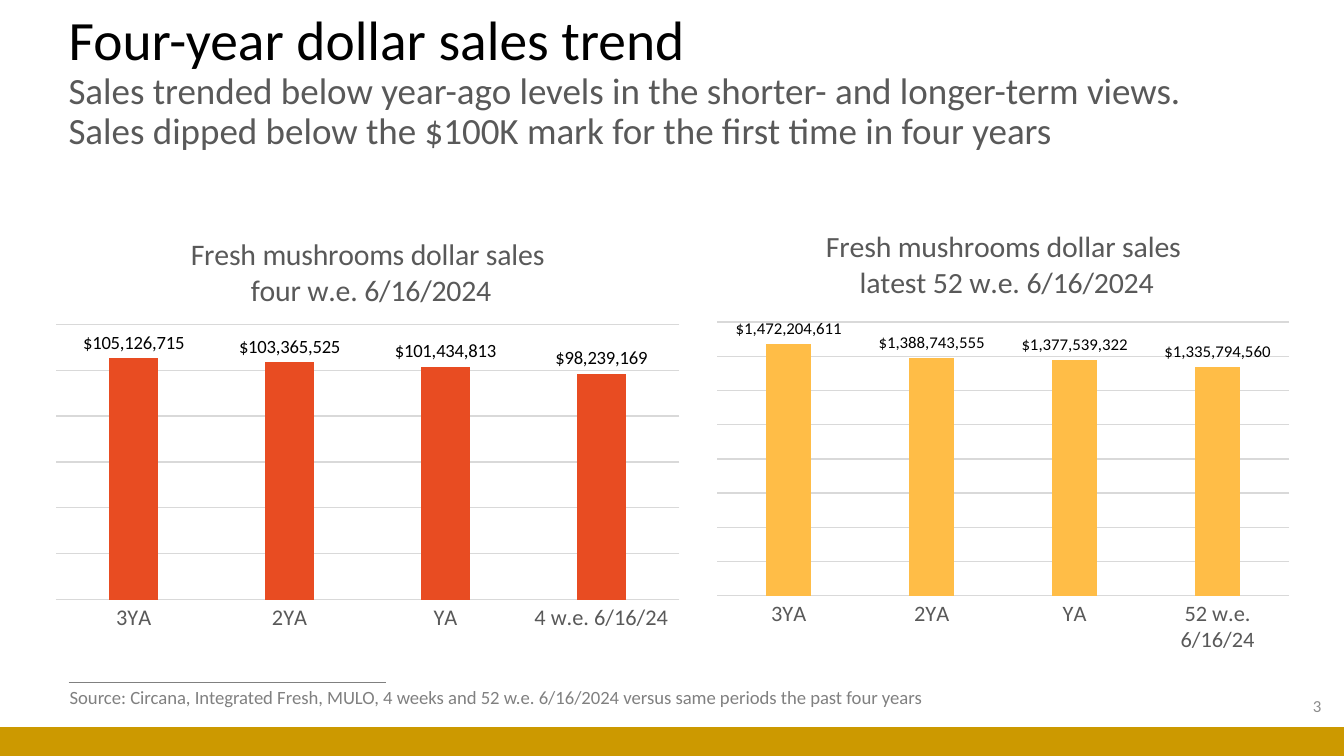
from lxml import etree
from pptx import Presentation
from pptx.chart.data import CategoryChartData
from pptx.dml.color import RGBColor
from pptx.enum.chart import XL_CHART_TYPE, XL_LABEL_POSITION, XL_TICK_MARK
from pptx.enum.shapes import MSO_CONNECTOR, MSO_SHAPE
from pptx.enum.text import MSO_ANCHOR, MSO_AUTO_SIZE, PP_ALIGN
from pptx.oxml.ns import qn
from pptx.util import Inches, Pt

COLUMNS = XL_CHART_TYPE.COLUMN_CLUSTERED
OUTSIDE_END = XL_LABEL_POSITION.OUTSIDE_END
NO_TICKS = XL_TICK_MARK.NONE
STRAIGHT = MSO_CONNECTOR.STRAIGHT
RECTANGLE = MSO_SHAPE.RECTANGLE
MIDDLE = MSO_ANCHOR.MIDDLE
NO_AUTOFIT = MSO_AUTO_SIZE.NONE
LEFT, RIGHT = PP_ALIGN.LEFT, PP_ALIGN.RIGHT

DOLLARS = "\\$#,##0"
GRAY, LIGHT_GRAY, DARK_GRAY = "808080", "D9D9D9", "595959"


def rgb(color):
    return RGBColor.from_string(color)


def set_font(font, size, color):
    font.name = "Calibri"
    font.size = Pt(size)
    font.bold = False
    font.color.rgb = rgb(color)


prs = Presentation()
prs.slide_width = Inches(10)
prs.slide_height = prs.slide_width * 9 // 16
slide = prs.slides.add_slide(prs.slide_layouts[5])
shapes = slide.shapes

source_rule = shapes.add_connector(STRAIGHT, Inches(0.51), Inches(5.08), Inches(2.87), Inches(5.08))
source_rule.line.color.rgb = rgb(GRAY)
source_rule.line.width = Pt(0.5)
etree.SubElement(source_rule._element.spPr, qn("a:effectLst"))

footer_band = shapes.add_shape(RECTANGLE, 0, Inches(5.41), Inches(10), prs.slide_height - Inches(5.41))
footer_band.shadow.inherit = False
footer_band.fill.solid()
footer_band.fill.fore_color.rgb = rgb("CC9900")
footer_band.line.fill.background()

title = shapes.title
title.left, title.top = Inches(0.41), Inches(0.22)
title.width, title.height = Inches(8.6), Inches(0.79)
title.text_frame.auto_size = NO_AUTOFIT
title.text_frame.vertical_anchor = MIDDLE
heading = title.text_frame.paragraphs[0]
heading.alignment = LEFT
heading.line_spacing = 0.9
headline = heading.add_run()
headline.text = "Four-year dollar sales trend"
set_font(headline.font, 29.7, "000000")
heading.add_line_break()
takeaway = heading.add_run()
takeaway.text = ("Sales trended below year-ago levels in the shorter- and longer-term views. "
                 "Sales dipped below the $100K mark for the first time in four years")
set_font(takeaway.font, 19.8, DARK_GRAY)

notes = [
    ("3", (7.68, 5.1, 2.25, 0.3), 9, "8C8C8C", RIGHT),
    ("Source: Circana, Integrated Fresh, MULO, 4 weeks and 52 w.e. 6/16/2024 "
     "versus same periods the past four years", (0.42, 5.05, 6.75, 0.27), 10, GRAY, LEFT),
]
for text, place, size, color, alignment in notes:
    note = shapes.add_textbox(*map(Inches, place)).text_frame
    note.vertical_anchor = MIDDLE
    note.text = text
    note.paragraphs[0].alignment = alignment
    set_font(note.paragraphs[0].font, size, color)

sales_charts = [
    ("four w.e. 6/16/2024", "4 w.e. 6/16/24",
     (105126715, 103365525, 101434813, 98239169),
     (0.41, 1.55, 4.65, 3.31), (0.21, 0.05), (0, 0.261, 1, 0.619), "E84C22", 10),
    ("latest 52 w.e. 6/16/2024", "52 w.e. 6/16/24",
     (1472204611, 1388743555, 1377539322, 1335794560),
     (5.16, 1.63, 4.55, 3.23), (0.21, 0.01), (0.039, 0.242, 0.935, 0.642), "FFBD47", 9),
]
for period, current, sales, place, title_corner, plot_area, color, label_size in sales_charts:
    data = CategoryChartData(number_format=DOLLARS)
    data.categories = ["3YA", "2YA", "YA", current]
    data.add_series("Series 1", sales)
    chart = shapes.add_chart(COLUMNS, *map(Inches, place), data).chart
    set_font(chart.font, 10, "000000")
    chart.has_legend = False

    chart.has_title = True
    chart.chart_title.include_in_layout = False
    chart.chart_title.text_frame.text = f"Fresh mushrooms dollar sales \n{period}"
    for paragraph in chart.chart_title.text_frame.paragraphs:
        set_font(paragraph.font, 16, DARK_GRAY)

    years = chart.category_axis
    years.major_tick_mark = years.minor_tick_mark = NO_TICKS
    years.format.line.color.rgb = rgb(LIGHT_GRAY)
    years.format.line.width = Pt(0.75)
    set_font(years.tick_labels.font, 12, DARK_GRAY)

    dollars = chart.value_axis
    dollars.visible = False
    dollars.major_tick_mark = dollars.minor_tick_mark = NO_TICKS
    dollars.minimum_scale = 0
    dollars.tick_labels.number_format = DOLLARS
    dollars.tick_labels.number_format_is_linked = False
    dollars.major_gridlines.format.line.color.rgb = rgb(LIGHT_GRAY)
    dollars.major_gridlines.format.line.width = Pt(0.75)

    plot = chart.plots[0]
    plot.vary_by_categories = False
    plot.gap_width = 219
    plot.overlap = -27
    columns = plot.series[0]
    columns.format.fill.solid()
    columns.format.fill.fore_color.rgb = rgb(color)
    labels = columns.data_labels
    labels.show_value = True
    labels.position = OUTSIDE_END
    labels.number_format = DOLLARS
    labels.number_format_is_linked = False
    set_font(labels.font, label_size, "000000")

    chart_parts = chart._chartSpace.chart
    edges = [("xMode", "edge"), ("yMode", "edge")]
    layouts = [
        (chart_parts.find(qn("c:title")), 1, [*edges, *zip("xy", title_corner)]),
        (chart_parts.plotArea, 0, [("layoutTarget", "inner"), *edges, *zip("xywh", plot_area)]),
    ]
    for parent, position, settings in layouts:
        for old_layout in parent.findall(qn("c:layout")):
            parent.remove(old_layout)
        layout = etree.Element(qn("c:layout"))
        manual = etree.SubElement(layout, qn("c:manualLayout"))
        for tag, value in settings:
            etree.SubElement(manual, qn(f"c:{tag}")).set("val", str(value))
        parent.insert(position, layout)

prs.save("out.pptx")
